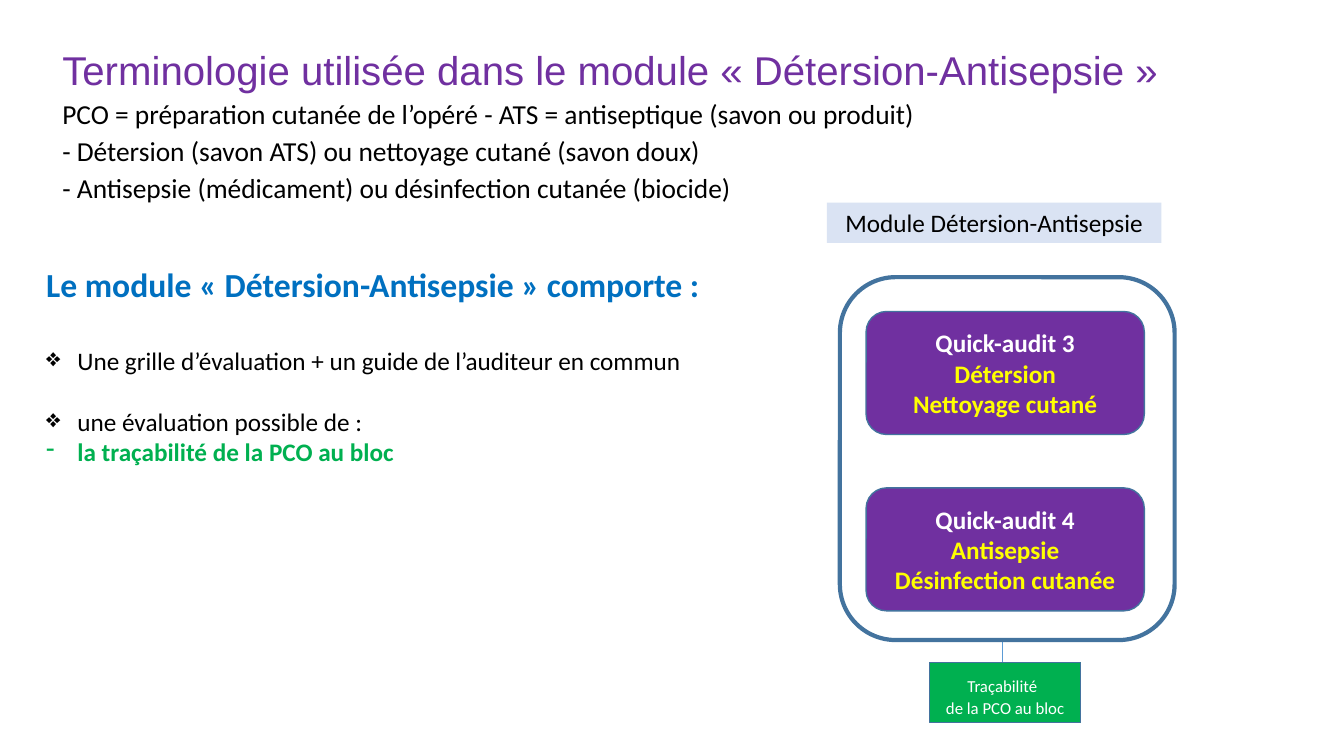
from lxml.etree import SubElement
from pptx import Presentation
from pptx.dml.color import RGBColor
from pptx.enum.shapes import MSO_CONNECTOR as Connector, MSO_SHAPE as Shape
from pptx.enum.text import MSO_ANCHOR as Anchor, PP_ALIGN as Align
from pptx.oxml.ns import qn
from pptx.util import Inches, Pt

COLORS = {
    "purple": "7030A0", "black": "000000", "white": "FFFFFF", "yellow": "FFFF00",
    "blue": "0070C0", "green": "00B050", "pale": "DAE3F3", "border": "43739E",
    "link": "5B9BD5",
}


def color(name):
    """Return the named colour."""
    return RGBColor.from_string(COLORS[name])


def add_run(paragraph, text, size, tint, bold=False, name="Calibri"):
    """Append a formatted run."""
    run = paragraph.add_run()
    run.text = text
    for key, value in {"size": Pt(size), "bold": bold, "name": name}.items():
        setattr(run.font, key, value)
    run.font.color.rgb = color(tint)


def write(frame, lines, **layout):
    """Write one paragraph per line, each a list of run arguments."""
    frame.word_wrap = True
    paragraphs = []
    for index, runs in enumerate(lines):
        paragraph = frame.add_paragraph() if index else frame.paragraphs[0]
        for key, value in layout.items():
            setattr(paragraph, key, value)
        for run in runs:
            add_run(paragraph, *run)
        paragraphs.append(paragraph)
    return paragraphs


def set_bullet(paragraph, character):
    """Give a paragraph a hanging bullet."""
    properties = paragraph._p.get_or_add_pPr()
    properties.set("marL", str(Inches(0.31)))
    properties.set("indent", str(-Inches(0.31)))
    SubElement(properties, qn("a:buChar")).set("char", character)


def add_text(slide, box, lines, **layout):
    """Add a wrapping text box."""
    shape = slide.shapes.add_textbox(*map(Inches, box))
    return write(shape.text_frame, lines, **layout)


def add_box(slide, kind, box, fill=None, width=0, lines=(), anchor=Anchor.MIDDLE):
    """Add a shape with centred text."""
    shape = slide.shapes.add_shape(kind, *map(Inches, box))
    shape.shadow.inherit = False
    if fill:
        shape.fill.solid()
        shape.fill.fore_color.rgb = color(fill)
    else:
        shape.fill.background()
    if width:
        shape.line.color.rgb = color("border")
        shape.line.width = Pt(width)
    else:
        shape.line.fill.background()
    shape.text_frame.vertical_anchor = anchor
    write(shape.text_frame, lines, alignment=Align.CENTER)


def add_terminology(slide, box):
    """Place the title and the definitions."""
    definitions = [
        "PCO = préparation cutanée de l’opéré - ATS = antiseptique (savon ou produit)",
        "- Détersion (savon ATS) ou nettoyage cutané (savon doux)",
        "- Antisepsie (médicament) ou désinfection cutanée (biocide)",
    ]
    title = "Terminologie utilisée dans le module « Détersion-Antisepsie »"
    lines = [[(title, 28.7, "purple", False, "Arial")]]
    lines += [[(text, 19.6, "black")] for text in definitions]
    add_text(slide, box, lines, line_spacing=0.7, space_before=Pt(10))


def add_contents(slide, box):
    """Place the heading and the list of module contents."""
    items = [
        ("Une grille d’évaluation + un guide de l’auditeur en commun", "black", False, "❖", 29),
        ("une évaluation possible de :", "black", False, "❖", 22),
        ("la traçabilité de la PCO au bloc", "green", True, "-", 0),
    ]
    heading = "Le module « Détersion-Antisepsie » comporte :"
    lines = [[(heading, 24, "blue", True)]]
    lines += [[(text, 18, tint, bold)] for text, tint, bold, _, _ in items]
    paragraphs = add_text(slide, box, lines)
    for paragraph, (_, _, _, bullet, gap) in zip(paragraphs[1:], items):
        paragraph.space_before = Pt(gap)
        set_bullet(paragraph, bullet)


def add_link(slide, x, top, bottom):
    """Draw the vertical link to the traceability box."""
    ends = map(Inches, (x, top, x, bottom))
    link = slide.shapes.add_connector(Connector.STRAIGHT, *ends)
    link.line.color.rgb = color("link")
    link.line.width = Pt(0.5)
    SubElement(link._element.spPr, qn("a:effectLst"))


def add_module(slide, box):
    """Place the module diagram: label, audits, frame and traceability."""
    left, top, width, height = box
    label = [[("Module Détersion-Antisepsie", 18, "black")]]
    add_box(slide, Shape.RECTANGLE, (left - 0.13, top - 0.74, width, 0.4), "pale",
            lines=label, anchor=Anchor.TOP)
    add_link(slide, left + 1.61, top + height + 0.02, top + height + 0.39)
    audits = [
        ("Quick-audit 3", "Détersion", "Nettoyage cutané"),
        ("Quick-audit 4", "Antisepsie", "Désinfection cutanée"),
    ]
    for index, (name, *topics) in enumerate(audits):
        lines = [[(name, 18, "white", True)]]
        lines += [[(topic, 18, "yellow", True)] for topic in topics]
        place = (left + 0.26, top + 0.34 + 1.75 * index, 2.76, 1.22)
        add_box(slide, Shape.ROUNDED_RECTANGLE, place, "purple", 1, lines)
    add_box(slide, Shape.ROUNDED_RECTANGLE, box, width=3)
    trace = [
        [("Traçabilité", 12, "white"), (" ", 18, "white")],
        [("de la PCO au bloc", 12, "white")],
    ]
    add_box(slide, Shape.RECTANGLE, (left + 0.89, top + height + 0.22, 1.5, 0.6),
            "green", 1, trace)


def main():
    """Build and save the slide."""
    presentation = Presentation()
    presentation.slide_width = Inches(13.33)
    presentation.slide_height = Inches(7.5)
    slide = presentation.slides.add_slide(presentation.slide_layouts[6])
    add_terminology(slide, (0.52, 0.53, 12.29, 1.6))
    add_contents(slide, (0.36, 2.57, 7.13, 2.12))
    add_module(slide, (8.33, 2.75, 3.32, 3.6))
    presentation.save("out.pptx")


if __name__ == "__main__":
    main()
